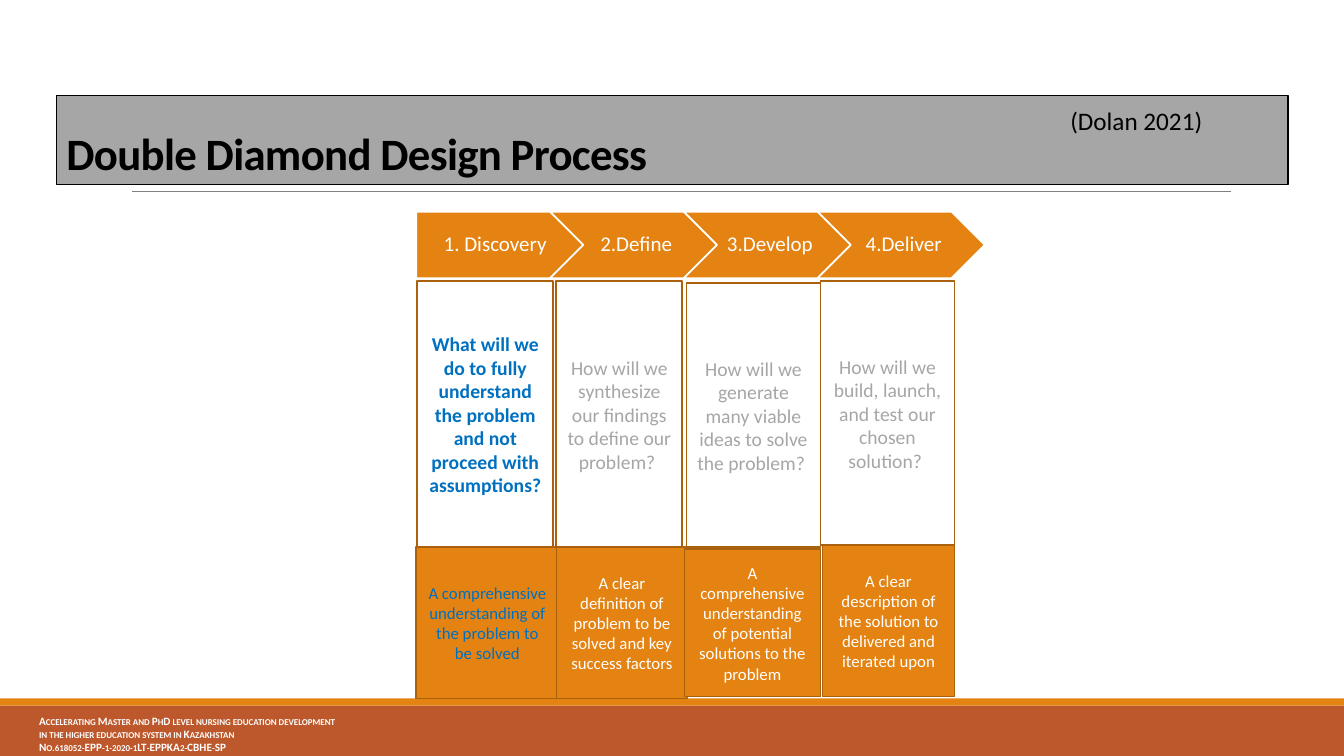
from lxml.etree import SubElement
from pptx import Presentation
from pptx.dml.color import RGBColor
from pptx.enum.shapes import MSO_CONNECTOR, MSO_SHAPE
from pptx.enum.text import MSO_ANCHOR, PP_ALIGN
from pptx.oxml.ns import qn
from pptx.util import Inches, Pt

WIDTH, HEIGHT = Inches(13.33), Inches(7.5)
COLUMNS, ROWS = 40, 22.5
ORANGE, BROWN, RUST = "E48312", "A9610D", "BD582C"
WHITE, BLACK, GREY, BLUE = "FFFFFF", "000000", "A6A6A6", "0070C0"
STEP_LEFT, STEP_PITCH = 12.39, 3.98

STEPS = ["1. Discovery", "2.Define", "3.Develop", "4.Deliver"]
QUESTIONS = [
    ("What will we do to fully understand the problem and not proceed with assumptions?",
     (12.42, 8.37, 4.05, 7.92)),
    ("How will we synthesize our findings to define our problem? ",
     (16.56, 8.37, 3.75, 7.92)),
    ("How will we generate many viable ideas to solve the problem? ",
     (20.43, 8.43, 3.99, 7.86)),
    ("How will we build, launch, and test our chosen solution? ",
     (24.42, 8.37, 3.99, 7.86)),
]
OUTCOMES = [
    ("A comprehensive understanding of the problem to be solved",
     (12.39, 16.29, 4.23, 4.5)),
    ("A clear definition of problem to be solved and key success factors",
     (16.56, 16.29, 3.9, 4.5)),
    ("A comprehensive understanding of potential solutions to the problem",
     (20.37, 16.35, 4.05, 4.38)),
    ("A clear description of the solution to delivered and iterated upon",
     (24.48, 16.23, 3.93, 4.5)),
]
FOOTER = [
    "Accelerating Master and PhD level nursing education development",
    "in the higher education system in Kazakhstan",
    "No.618052-EPP-1-2020-1LT-EPPKA2-CBHE-SP",
]


def color(value):
    """Turn a hex string into a colour."""
    return RGBColor.from_string(value)


def across(columns):
    """Turn grid columns into a length."""
    return round(WIDTH * columns / COLUMNS)


def down(rows):
    """Turn grid rows into a length."""
    return round(HEIGHT * rows / ROWS)


def place(box):
    """Turn a grid box into left, top, width and height."""
    left, top, width, height = box
    return across(left), down(top), across(width), down(height)


def apply(target, values):
    """Set each named attribute on the target."""
    for name, value in values.items():
        setattr(target, name, value)


def write(shape, lines, size, hex_color, bold=False, frame=None, layout=None, run_marks=None):
    """Write one paragraph per line with shared formatting."""
    text_frame = shape.text_frame
    apply(text_frame, {"word_wrap": True, **(frame or {})})
    for index, line in enumerate(lines):
        paragraph = text_frame.add_paragraph() if index else text_frame.paragraphs[0]
        apply(paragraph, layout or {})
        run = paragraph.add_run()
        run.text = line
        apply(run.font, {"name": "Calibri", "size": Pt(size), "bold": bold})
        run.font.color.rgb = color(hex_color)
        for name, value in (run_marks or {}).items():
            run._r.get_or_add_rPr().set(name, value)


def add_block(slide, kind, box, fill, line=None, line_width=1.25):
    """Add a filled preset shape on the grid."""
    shape = slide.shapes.add_shape(kind, *place(box))
    shape.shadow.inherit = False
    shape.fill.solid()
    shape.fill.fore_color.rgb = color(fill)
    if line:
        shape.line.color.rgb = color(line)
        shape.line.width = Pt(line_width)
    else:
        shape.line.fill.background()
    return shape


def add_rule(slide, left, right, top):
    """Add the thin line below the title."""
    rule = slide.shapes.add_connector(
        MSO_CONNECTOR.STRAIGHT, across(left), down(top), across(right), down(top))
    rule.line.color.rgb = color("808080")
    rule.line.width = Pt(0.5)
    SubElement(rule._element.spPr, qn("a:effectLst"))


def add_text(slide, box, lines, size, hex_color, **formats):
    """Add a text box on the grid."""
    write(slide.shapes.add_textbox(*place(box)), lines, size, hex_color, **formats)


def add_title(slide, text):
    """Add the grey title band."""
    band = add_block(slide, MSO_SHAPE.RECTANGLE, (1.68, 2.85, 36.66, 2.64), GREY, BLACK, 1)
    write(band, [text], 32, BLACK, bold=True,
          frame={"vertical_anchor": MSO_ANCHOR.BOTTOM},
          layout={"alignment": PP_ALIGN.LEFT, "line_spacing": 0.85},
          run_marks={"spc": "-50"})


def add_step(slide, index, text):
    """Add one arrow of the process."""
    kind = MSO_SHAPE.CHEVRON if index else MSO_SHAPE.PENTAGON
    box = (STEP_LEFT + index * STEP_PITCH, 6.3, 4.98, 1.98)
    arrow = add_block(slide, kind, box, ORANGE, WHITE)
    write(arrow, [text], 15, WHITE,
          frame={"vertical_anchor": MSO_ANCHOR.MIDDLE,
                 "margin_left": Inches(0.07 if index else 0.09),
                 "margin_right": Inches(0.02),
                 "margin_top": Inches(0.04), "margin_bottom": Inches(0.04)},
          layout={"alignment": PP_ALIGN.CENTER, "line_spacing": 0.9})


def add_cards(slide, cards, fill, size, plain_color, first_bold):
    """Add a row of cards whose first one is highlighted."""
    for index, (text, box) in enumerate(cards):
        card = add_block(slide, MSO_SHAPE.RECTANGLE, box, fill, BROWN)
        write(card, [text], size, plain_color if index else BLUE,
              bold=first_bold and index == 0,
              frame={"vertical_anchor": MSO_ANCHOR.MIDDLE},
              layout={"alignment": PP_ALIGN.CENTER})


def main():
    """Build and save the slide."""
    presentation = Presentation()
    apply(presentation, {"slide_width": WIDTH, "slide_height": HEIGHT})
    slide = presentation.slides.add_slide(presentation.slide_layouts[6])
    add_block(slide, MSO_SHAPE.RECTANGLE, (0, 21, COLUMNS, 1.5), RUST)
    add_block(slide, MSO_SHAPE.RECTANGLE, (0, 20.79, COLUMNS, 0.21), ORANGE)
    add_rule(slide, 3.93, 36.63, 5.7)
    add_text(slide, (0.87, 21.1, 13.77, 1.4), FOOTER, 8, WHITE, bold=True,
             run_marks={"cap": "small"})
    add_title(slide, "Double Diamond Design Process")
    for index, text in enumerate(STEPS):
        add_step(slide, index, text)
    add_cards(slide, OUTCOMES, ORANGE, 12, WHITE, first_bold=False)
    add_cards(slide, QUESTIONS, WHITE, 14, GREY, first_bold=True)
    add_text(slide, (31.56, 3, 6.6, 1.2), ["(Dolan 2021)"], 18, BLACK)
    presentation.save("out.pptx")


if __name__ == "__main__":
    main()
